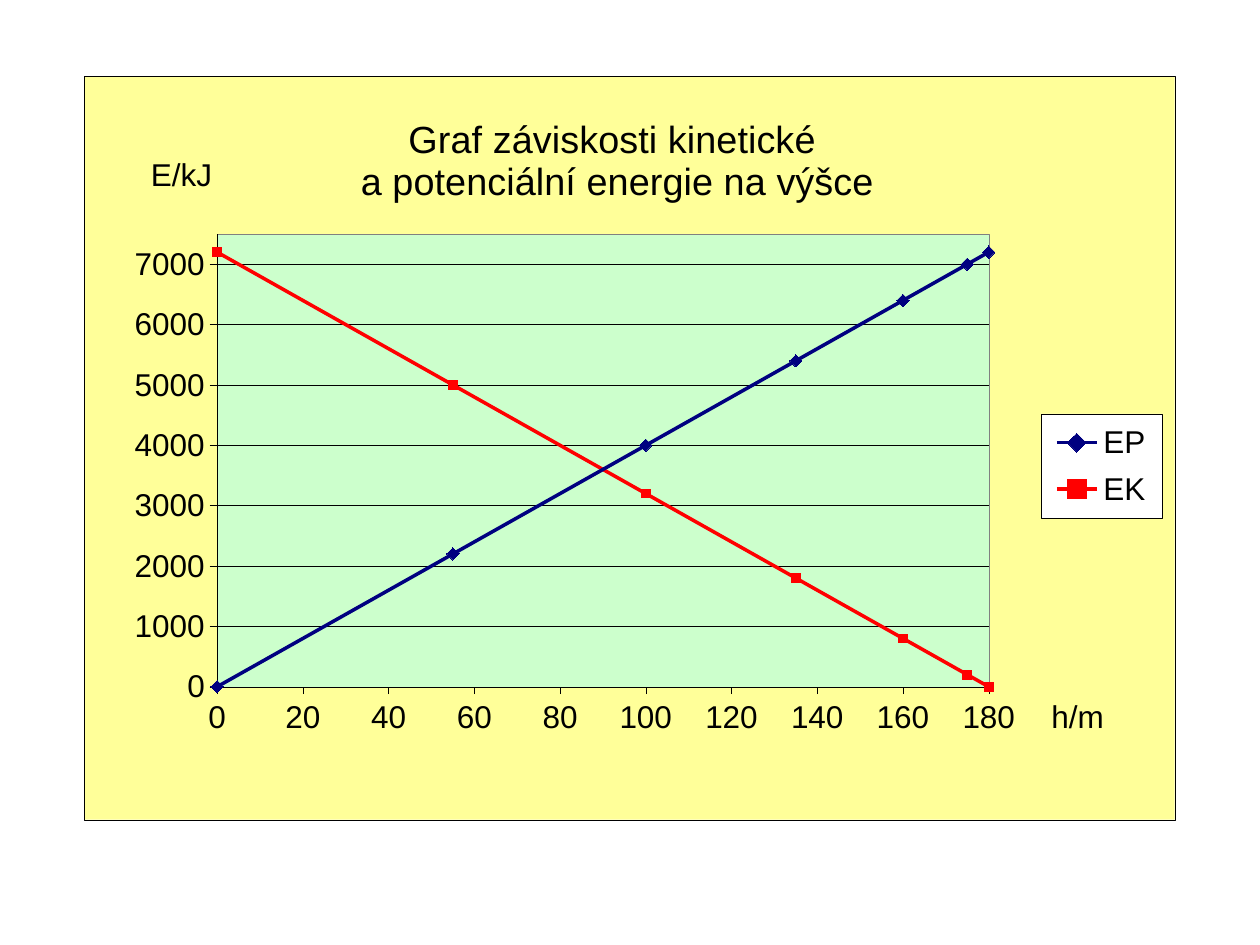
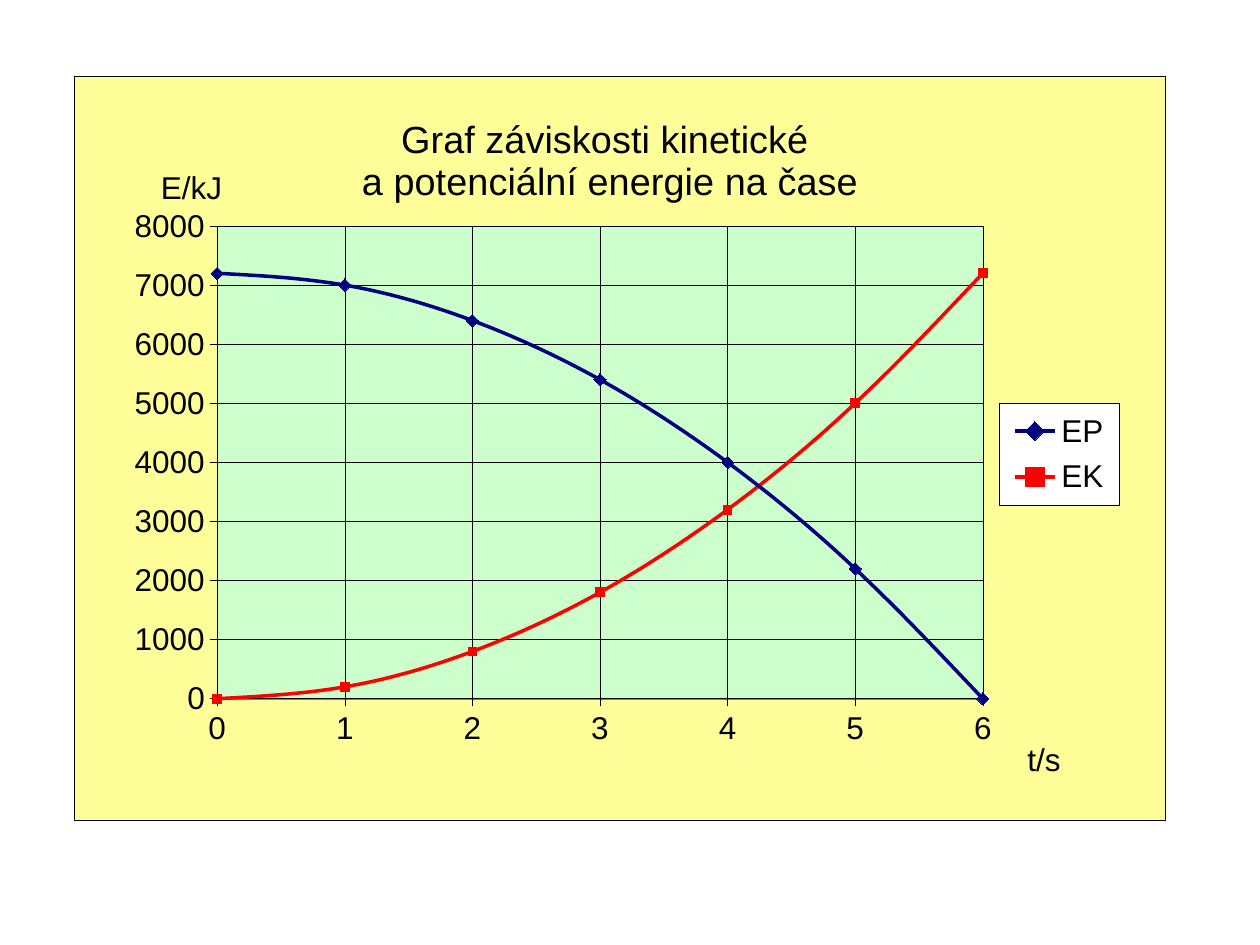
from dataclasses import dataclass

from lxml import etree
from pptx import Presentation
from pptx.chart.data import XyChartData
from pptx.dml.color import RGBColor
from pptx.enum.chart import XL_CHART_TYPE, XL_LEGEND_POSITION, XL_MARKER_STYLE, XL_TICK_MARK
from pptx.enum.text import PP_ALIGN
from pptx.oxml import parse_xml
from pptx.oxml.ns import nsdecls, qn
from pptx.util import Emu, Pt

STRAIGHT = XL_CHART_TYPE.XY_SCATTER_LINES
SMOOTH = XL_CHART_TYPE.XY_SCATTER_SMOOTH
RIGHT = XL_LEGEND_POSITION.RIGHT
DIAMOND = XL_MARKER_STYLE.DIAMOND
SQUARE = XL_MARKER_STYLE.SQUARE
OUTSIDE = XL_TICK_MARK.OUTSIDE
NO_TICK = XL_TICK_MARK.NONE
CENTER = PP_ALIGN.CENTER

PIXELS_PER_INCH = 126
EMU_PER_PIXEL = 914400 / PIXELS_PER_INCH


@dataclass(frozen=True)
class Theme:
    font: str = "Arial"
    body_size: float = 18
    title_size: float = 21.6
    hairline: float = 0.25
    curve_width: float = 2
    ink: str = "000000"
    frame_fill: str = "FFFF99"
    plot_fill: str = "CCFFCC"
    plot_border: str = "808080"
    legend_fill: str = "FFFFFF"
    potential: str = "000080"
    kinetic: str = "FF0000"


THEME = Theme()


@dataclass(frozen=True)
class Box:
    left: int
    top: int
    width: int = 0
    height: int = 0


@dataclass(frozen=True)
class Curve:
    name: str
    values: tuple[int, ...]
    color: str
    marker: XL_MARKER_STYLE
    marker_size: int


@dataclass(frozen=True)
class Scale:
    label: str
    label_box: Box
    maximum: int
    step: int
    grid: bool = True


@dataclass(frozen=True)
class EnergyChart:
    kind: XL_CHART_TYPE
    title: str
    positions: tuple[int, ...]
    frame: Box
    title_box: Box
    plot_box: Box
    legend_box: Box
    horizontal: Scale
    vertical: Scale


POTENTIAL_ENERGY = (7200, 7000, 6400, 5400, 4000, 2200, 0)
KINETIC_ENERGY = (0, 200, 800, 1800, 3200, 5000, 7200)
CURVES = (
    Curve("EP", POTENTIAL_ENERGY, THEME.potential, DIAMOND, 7),
    Curve("EK", KINETIC_ENERGY, THEME.kinetic, SQUARE, 5),
)

CHARTS = (
    EnergyChart(
        kind=STRAIGHT,
        title="Graf záviskosti kinetické \na potenciální energie na výšce",
        positions=(180, 175, 160, 135, 100, 55, 0),
        frame=Box(84, 76, 1091, 744),
        title_box=Box(357, 113),
        plot_box=Box(217, 234, 772, 453),
        legend_box=Box(1041, 414, 121, 104),
        horizontal=Scale("h/m", Box(1046, 690), 180, 20, grid=False),
        vertical=Scale("E/kJ", Box(145, 148), 7500, 1000),
    ),
    EnergyChart(
        kind=SMOOTH,
        title="Graf záviskosti kinetické \na potenciální energie na čase",
        positions=(0, 1, 2, 3, 4, 5, 6),
        frame=Box(74, 76, 1091, 744),
        title_box=Box(358, 113),
        plot_box=Box(217, 226, 766, 473),
        legend_box=Box(999, 403, 121, 102),
        horizontal=Scale("t/s", Box(1022, 733), 6, 1),
        vertical=Scale("E/kJ", Box(155, 161), 8000, 1000),
    ),
)


def px(length: int) -> Emu:
    return Emu(round(length * EMU_PER_PIXEL))


def rgb(color: str) -> RGBColor:
    return RGBColor.from_string(color)


def write_text(text_frame, text: str, *, size: float, color: str = THEME.ink) -> None:
    for index, line in enumerate(text.split("\n")):
        para = text_frame.add_paragraph() if index else text_frame.paragraphs[0]
        para.alignment = CENTER
        span = para.add_run()
        span.text = line
        span.font.name = THEME.font
        span.font.size = Pt(size)
        span.font.bold = False
        span.font.color.rgb = rgb(color)


def style_line(line, color: str, width: float) -> None:
    line.color.rgb = rgb(color)
    line.width = Pt(width)


def place(element, box: Box, frame: Box, inner: bool = False) -> None:
    for old in element.xpath("c:layout"):
        element.remove(old)
    layout = etree.Element(qn("c:layout"))
    manual = etree.SubElement(layout, qn("c:manualLayout"))
    settings = {"layoutTarget": "inner"} if inner else {}
    settings |= {
        "xMode": "edge",
        "yMode": "edge",
        "x": f"{(box.left - frame.left) / frame.width:.4f}",
        "y": f"{(box.top - frame.top) / frame.height:.4f}",
    }
    if box.width:
        settings |= {
            "w": f"{box.width / frame.width:.4f}",
            "h": f"{box.height / frame.height:.4f}",
        }
    for name, value in settings.items():
        etree.SubElement(manual, qn(f"c:{name}")).set("val", value)
    element.insert(len(element.xpath("c:tx | c:legendPos")), layout)


def area_format(fill: str, border: str):
    return parse_xml(
        f'<c:spPr {nsdecls("c", "a")}>'
        f'<a:solidFill><a:srgbClr val="{fill}"/></a:solidFill>'
        f'<a:ln w="{Pt(THEME.hairline)}"><a:solidFill><a:srgbClr val="{border}"/></a:solidFill></a:ln>'
        "</c:spPr>"
    )


def style_axis(axis, scale: Scale, frame: Box) -> None:
    axis.minimum_scale = 0
    axis.maximum_scale = scale.maximum
    axis.major_unit = scale.step
    axis.major_tick_mark = OUTSIDE
    axis.minor_tick_mark = NO_TICK
    style_line(axis.format.line, THEME.ink, THEME.hairline)
    axis.has_major_gridlines = scale.grid
    if scale.grid:
        style_line(axis.major_gridlines.format.line, THEME.ink, THEME.hairline)
    axis.has_title = True
    title = axis.axis_title
    write_text(title.text_frame, scale.label, size=THEME.body_size)
    for body in title.element.xpath("c:tx/c:rich/a:bodyPr"):
        body.set("rot", "0")
        body.set("vert", "horz")
    place(title.element, scale.label_box, frame)


def style_curve(series, curve: Curve) -> None:
    style_line(series.format.line, curve.color, THEME.curve_width)
    marker = series.marker
    marker.style = curve.marker
    marker.size = curve.marker_size
    marker.format.fill.solid()
    marker.format.fill.fore_color.rgb = rgb(curve.color)
    style_line(marker.format.line, curve.color, THEME.hairline)


def draw_chart(page, design: EnergyChart) -> None:
    data = XyChartData()
    for curve in CURVES:
        series_data = data.add_series(curve.name)
        for position, value in zip(design.positions, curve.values):
            series_data.add_data_point(position, value)
    frame = design.frame
    chart = page.shapes.add_chart(
        design.kind, px(frame.left), px(frame.top), px(frame.width), px(frame.height), data
    ).chart
    chart.font.name = THEME.font
    chart.font.size = Pt(THEME.body_size)
    chart.font.color.rgb = rgb(THEME.ink)

    chart.has_title = True
    write_text(chart.chart_title.text_frame, design.title, size=THEME.title_size)
    place(chart.chart_title.element, design.title_box, frame)
    style_axis(chart.category_axis, design.horizontal, frame)
    style_axis(chart.value_axis, design.vertical, frame)

    plot = chart.plots[0]
    plot.vary_by_categories = False
    for series, curve in zip(plot.series, CURVES):
        style_curve(series, curve)
    for smooth in chart.element.xpath(".//c:ser/c:smooth"):
        smooth.set("val", "1" if design.kind == SMOOTH else "0")

    chart.has_legend = True
    chart.legend.position = RIGHT
    chart.legend.include_in_layout = False
    legend = chart.element.xpath("c:chart/c:legend")[0]
    place(legend, design.legend_box, frame)
    legend.append(area_format(THEME.legend_fill, THEME.ink))

    plot_area = chart.element.xpath("c:chart/c:plotArea")[0]
    place(plot_area, design.plot_box, frame, inner=True)
    plot_area.append(area_format(THEME.plot_fill, THEME.plot_border))
    chart.element.xpath("c:chart")[0].addnext(area_format(THEME.frame_fill, THEME.ink))


def main() -> None:
    deck = Presentation()
    deck.slide_width = px(1260)
    deck.slide_height = px(945)
    blank_layout = deck.slide_layouts[6]
    for design in CHARTS:
        draw_chart(deck.slides.add_slide(blank_layout), design)
    deck.save("out.pptx")


if __name__ == "__main__":
    main()
